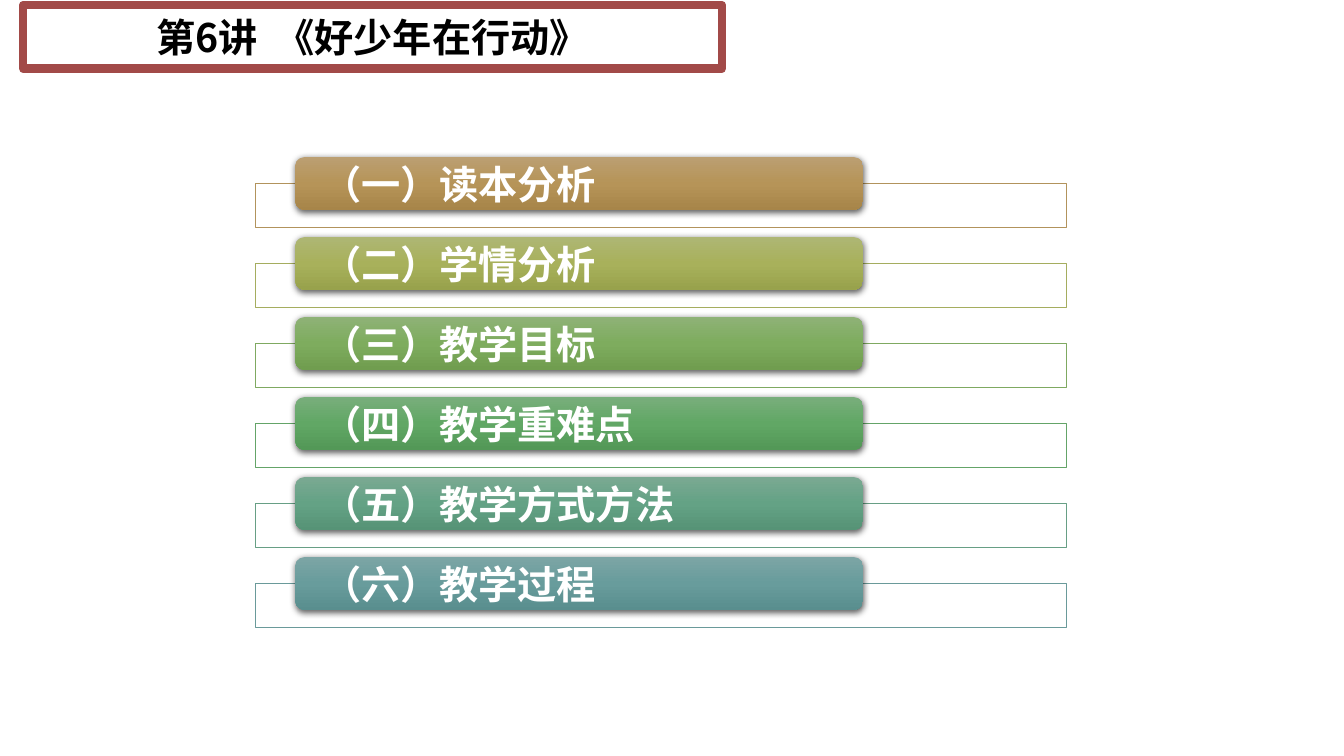
from pptx import Presentation
from pptx.dml.color import RGBColor
from pptx.enum.shapes import MSO_SHAPE
from pptx.enum.text import MSO_ANCHOR, MSO_AUTO_SIZE, PP_ALIGN
from pptx.oxml import parse_xml
from pptx.oxml.ns import nsdecls
from pptx.util import Pt

FONT = "Noto Sans CJK SC"
NS = nsdecls("a")
TITLE = "第6讲  《好少年在行动》"
# Label, frame line, gradient from top to bottom
ITEMS = [
    ("（一）读本分析", "B2935C", ("BB9F72", "B69458", "A78549")),
    ("（二）学情分析", "A5AD5F", ("AEB674", "A8B15B", "98A24C")),
    ("（三）教学目标", "7FA961", ("8EB276", "7EAC5E", "709D4F")),
    ("（四）教学重难点", "64A468", ("78AE7B", "61A765", "539857")),
    ("（五）教学方式方法", "679F85", ("7AA992", "64A285", "569376")),
    ("（六）教学过程", "6A9A9A", ("7CA5A5", "689C9C", "598E8E")),
]
TOP, STEP = 112.3, 57.14
DROP = 18.7  # frame top below bar top


def paint(form, color):
    """Give a fill format or a line's fill a solid colour."""
    form.solid()
    form.fore_color.rgb = RGBColor.from_string(color)


def apply(thing, values):
    for name, value in values.items():
        setattr(thing, name, value)


def place(shape, left, top, width, height):
    apply(shape, {"left": Pt(left), "top": Pt(top),
                  "width": Pt(width), "height": Pt(height)})


def write(shape, text, color, align, inset):
    frame = shape.text_frame
    apply(frame, {"word_wrap": True, "auto_size": MSO_AUTO_SIZE.NONE,
                  "vertical_anchor": MSO_ANCHOR.MIDDLE,
                  "margin_left": Pt(inset), "margin_right": Pt(inset),
                  "margin_top": 0, "margin_bottom": 0})
    para = frame.paragraphs[0]
    para.alignment = align
    run = para.add_run()
    run.text = text
    apply(run.font, {"size": Pt(28), "bold": True, "name": FONT})
    paint(run.font.fill, color)
    # East Asian typeface
    props = run.font._element
    props.append(parse_xml(f'<a:ea {NS} typeface="{FONT}"/>'))


def add_title(slide):
    title = slide.shapes.title
    place(title, 16.6, 3.6, 499, 45.4)
    title._element.spPr.append(parse_xml(
        f'<a:prstGeom {NS} prst="roundRect"><a:avLst/></a:prstGeom>'))
    paint(title.fill, "FFFFFF")
    paint(title.line.fill, "A24A48")
    title.line.width = Pt(6)
    write(title, TITLE, "000000", PP_ALIGN.CENTER, 7.2)


def add_frame(slide, top, color):
    box = slide.shapes.add_shape(
        MSO_SHAPE.RECTANGLE, Pt(182.2), Pt(top), Pt(579.6), Pt(31.7))
    box.shadow.inherit = False
    paint(box.fill, "FFFFFF")
    tint = box._element.spPr.find(".//{*}srgbClr")
    tint.append(parse_xml(f'<a:alpha {NS} val="90000"/>'))
    paint(box.line.fill, color)
    box.line.width = Pt(0.5)


def add_bar(slide, top, text, colors):
    bar = slide.shapes.add_shape(
        MSO_SHAPE.ROUNDED_RECTANGLE, Pt(211), Pt(top), Pt(405.4), Pt(37.6))
    bar.line.fill.background()
    bar.shadow.inherit = False
    props = bar._element.spPr
    # Three-stop gradient, straight after the geometry
    stops = "".join(
        f'<a:gs pos="{i * 50000}"><a:srgbClr val="{color}"/></a:gs>'
        for i, color in enumerate(colors))
    props.insert(2, parse_xml(
        f'<a:gradFill {NS} rotWithShape="1"><a:gsLst>{stops}</a:gsLst>'
        '<a:lin ang="5400000" scaled="0"/></a:gradFill>'))
    # Soft shadow below
    props.find("{*}effectLst").append(parse_xml(
        f'<a:outerShdw {NS} blurRad="{Pt(4.5)}" dist="{Pt(1.5)}" '
        'dir="5400000" algn="ctr" rotWithShape="0"><a:srgbClr val="000000">'
        '<a:alpha val="63000"/></a:srgbClr></a:outerShdw>'))
    write(bar, text, "FFFFFF", PP_ALIGN.LEFT, 17.2)


def main():
    deck = Presentation()
    apply(deck, {"slide_width": Pt(960), "slide_height": Pt(540)})
    slide = deck.slides.add_slide(deck.slide_layouts[5])
    add_title(slide)
    # Agenda rows
    for i, (text, edge, colors) in enumerate(ITEMS):
        top = TOP + i * STEP
        add_frame(slide, top + DROP, edge)
        add_bar(slide, top, text, colors)
    deck.save("out.pptx")


if __name__ == "__main__":
    main()
